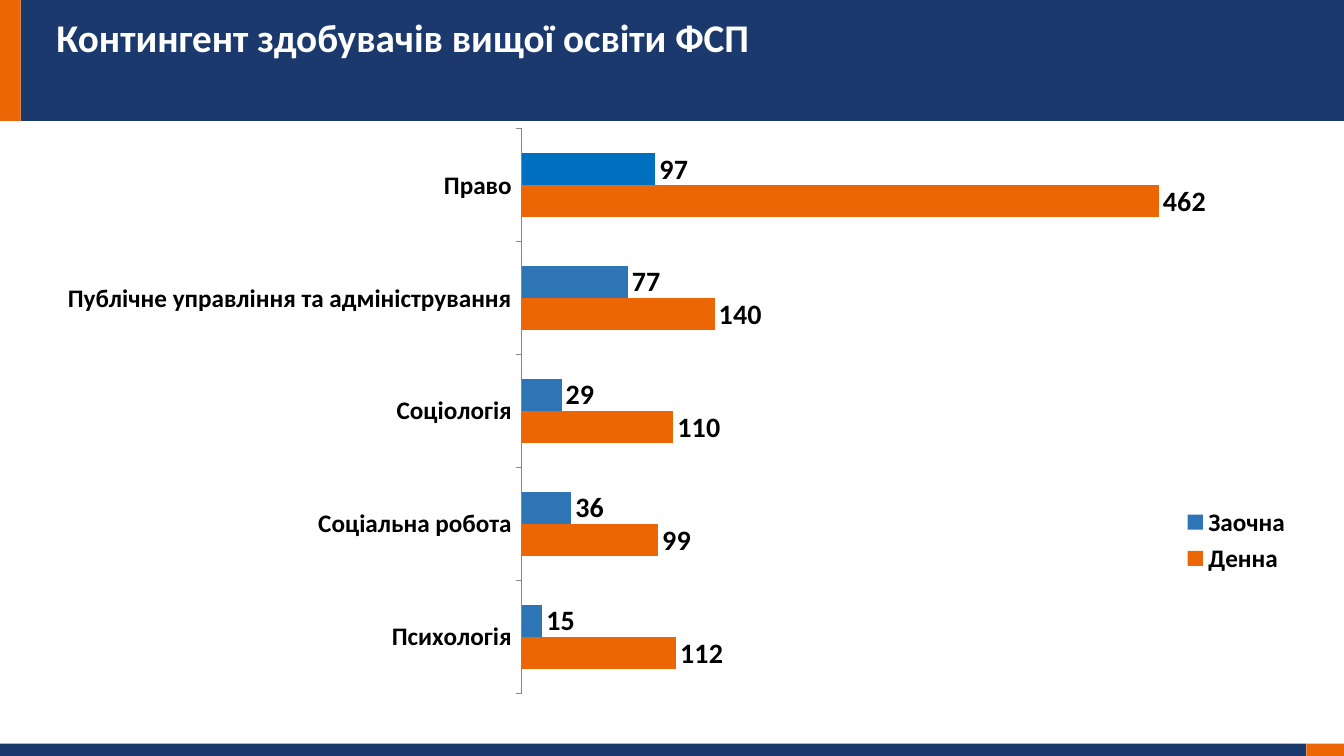
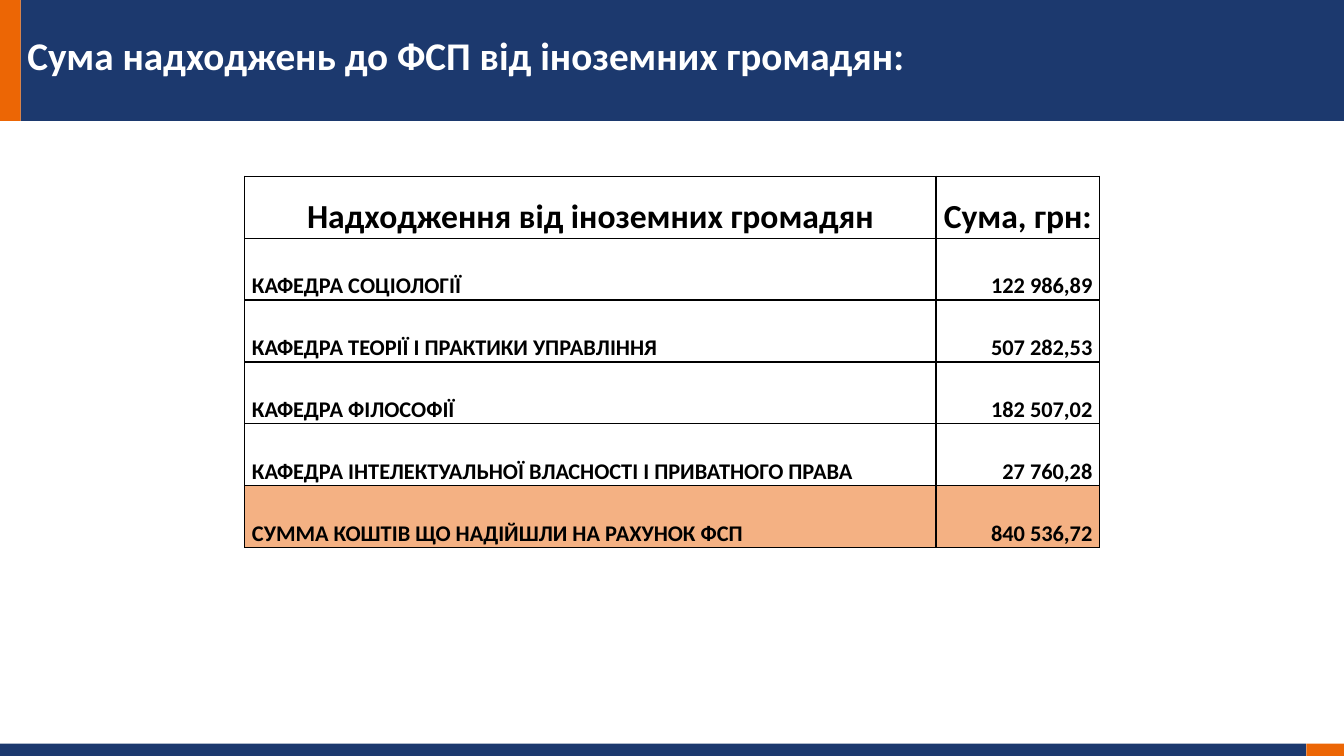
from lxml.etree import Element, SubElement
from pptx import Presentation
from pptx.chart.data import CategoryChartData
from pptx.dml.color import RGBColor
from pptx.enum.chart import XL_CHART_TYPE, XL_LABEL_POSITION, XL_LEGEND_POSITION, XL_TICK_MARK
from pptx.enum.shapes import MSO_SHAPE
from pptx.enum.text import MSO_ANCHOR, PP_ALIGN
from pptx.oxml import parse_xml
from pptx.oxml.ns import nsdecls, qn
from pptx.util import Cm, Pt

FONT = "Calibri"
NAVY, ORANGE, BLUE, BRIGHT_BLUE = "1C396E", "EC6605", "2E75B6", "0070C0"
PEACH, GREY, BLACK, WHITE = "F4B183", "868686", "000000", "FFFFFF"


def style(font, size, color):
    font.name, font.size, font.bold = FONT, Pt(size), True
    font.color.rgb = RGBColor.from_string(color)


def manual_layout(x, y, width, height, inner=False):
    """Return a c:layout element; lengths are fractions of the chart."""
    layout = Element(qn("c:layout"))
    manual = SubElement(layout, qn("c:manualLayout"))
    settings = [("layoutTarget", "inner")] if inner else []
    settings += [("xMode", "edge"), ("yMode", "edge"),
                 ("x", x), ("y", y), ("w", width), ("h", height)]
    for tag, value in settings:
        SubElement(manual, qn(f"c:{tag}")).set("val", str(value))
    return layout


prs = Presentation()
prs.slide_width, prs.slide_height = Cm(33.87), Cm(19.05)
title_only = prs.slide_layouts[5]
for placeholder in list(title_only.placeholders)[1:]:
    title_only.shapes.element.remove(placeholder.element)

# Titles
titles = [
    ("Контингент здобувачів вищої освіти ФСП", 1.42, 0.51, 23.4),
    ("Сума надходжень до ФСП від іноземних громадян:", 0.69, 0.97, 24.74),
]
slides = []
for text, left, top, width in titles:
    slide = prs.slides.add_slide(title_only)
    title = slide.shapes.title
    title.left, title.top, title.width, title.height = Cm(left), Cm(top), Cm(width), Cm(2.29)
    frame = title.text_frame
    frame.word_wrap = True
    frame.vertical_anchor = MSO_ANCHOR.TOP
    frame.margin_left = frame.margin_top = 0
    frame.margin_right, frame.margin_bottom = Cm(0.84), Cm(0.33)
    paragraph = frame.paragraphs[0]
    paragraph.alignment = PP_ALIGN.LEFT
    paragraph.line_spacing = 0.85
    run = paragraph.add_run()
    run.text = text
    style(run.font, 28, WHITE)
    slides.append(slide)
enrolment, income = slides

# Header and footer bands, moved to the shared layout
bands = [
    (0.52, -0.05, 33.35, 3.1, NAVY),
    (-0.08, -0.05, 0.6, 3.1, ORANGE),
    (-0.08, 18.74, 33, 0.31, NAVY),
    (32.92, 18.74, 0.95, 0.31, ORANGE),
]
for position, (left, top, width, height, color) in enumerate(bands, start=2):
    band = enrolment.shapes.add_shape(
        MSO_SHAPE.RECTANGLE, Cm(left), Cm(top), Cm(width), Cm(height))
    band.shadow.inherit = False
    band.fill.solid()
    band.fill.fore_color.rgb = RGBColor.from_string(color)
    band.line.fill.background()
    title_only.shapes.element.insert(position, band.element)

# Students by programme and form of study
students = CategoryChartData()
students.categories = ["Психологія", "Соціальна робота", "Соціологія",
                       "Публічне управління та адміністрування", "Право"]
students.add_series("Денна", [112, 99, 110, 140, 462])
students.add_series("Заочна", [15, 36, 29, 77, 97])
chart = enrolment.shapes.add_chart(
    XL_CHART_TYPE.BAR_CLUSTERED, Cm(1.14), Cm(2.79), Cm(31.6), Cm(15.14), students).chart
chart.has_title = False
style(chart.font, 18, BLACK)

programmes = chart.category_axis
style(programmes.tick_labels.font, 18, BLACK)
programmes.major_tick_mark = XL_TICK_MARK.OUTSIDE
programmes.format.line.color.rgb = RGBColor.from_string(GREY)
programmes.has_major_gridlines = False
counts = chart.value_axis
counts.minimum_scale, counts.maximum_scale = 0, 500
counts.has_major_gridlines = False
counts.visible = False

plot = chart.plots[0]
plot.gap_width = 150
plot.overlap = 0
plot.vary_by_categories = False
for series, color in zip(plot.series, (ORANGE, BLUE)):
    series.invert_if_negative = False
    series.format.fill.solid()
    series.format.fill.fore_color.rgb = RGBColor.from_string(color)
    labels = series.data_labels
    labels.show_value = True
    labels.position = XL_LABEL_POSITION.OUTSIDE_END
    style(labels.font, 20, BLACK)
law_part_time = plot.series[1].points[4].format.fill
law_part_time.solid()
law_part_time.fore_color.rgb = RGBColor.from_string(BRIGHT_BLUE)

chart.has_legend = True
chart.legend.position = XL_LEGEND_POSITION.RIGHT
chart.legend.include_in_layout = False
style(chart.legend.font, 18, BLACK)
for old_layout in chart.element.xpath(".//c:plotArea/c:layout | .//c:legend/c:layout"):
    old_layout.getparent().remove(old_layout)
chart.element.xpath(".//c:plotArea")[0].insert(
    0, manual_layout(0.38, 0.03, 0.55, 0.94, inner=True))
chart.element.xpath(".//c:legendPos")[0].addnext(manual_layout(0.9, 0.65, 0.1, 0.13))

# Income from foreign citizens
income_rows = [
    ("Надходження від іноземних громадян", "Сума, грн:"),
    ("КАФЕДРА СОЦІОЛОГІЇ", "122 986,89"),
    ("КАФЕДРА ТЕОРІЇ І ПРАКТИКИ УПРАВЛІННЯ", "507 282,53"),
    ("КАФЕДРА ФІЛОСОФІЇ", "182 507,02"),
    ("КАФЕДРА ІНТЕЛЕКТУАЛЬНОЇ ВЛАСНОСТІ І ПРИВАТНОГО ПРАВА", "27 760,28"),
    ("СУММА КОШТІВ ЩО НАДІЙШЛИ НА РАХУНОК ФСП", "840 536,72"),
]
row_height = 1.56
table = income.shapes.add_table(
    len(income_rows), 2, Cm(6.17), Cm(4.44), Cm(21.54), Cm(row_height * len(income_rows))).table
table.first_row = table.horz_banding = False
table.columns[0].width, table.columns[1].width = Cm(17.42), Cm(4.12)

for row, texts in enumerate(income_rows):
    is_header, is_total = row == 0, row == len(income_rows) - 1
    for column, text in enumerate(texts):
        cell = table.cell(row, column)
        cell.margin_left = cell.margin_right = Cm(0.18)
        cell.margin_top = cell.margin_bottom = 0
        cell.vertical_anchor = MSO_ANCHOR.MIDDLE if is_header else MSO_ANCHOR.BOTTOM
        paragraph = cell.text_frame.paragraphs[0]
        paragraph.line_spacing = 1.5
        if is_header:
            paragraph.alignment = PP_ALIGN.CENTER
        else:
            paragraph.alignment = (PP_ALIGN.LEFT, PP_ALIGN.RIGHT)[column]
        run = paragraph.add_run()
        run.text = text
        style(run.font, 24 if is_header else 16, BLACK)
        if is_total:
            cell.fill.solid()
            cell.fill.fore_color.rgb = RGBColor.from_string(PEACH)
        else:
            cell.fill.background()
        properties = cell._tc.get_or_add_tcPr()
        for order, side in enumerate(("lnL", "lnR", "lnT", "lnB")):
            properties.insert(order, parse_xml(
                f'<a:{side} {nsdecls("a")} w="{Pt(1)}"><a:solidFill>'
                f'<a:srgbClr val="{BLACK}"/></a:solidFill></a:{side}>'))

prs.save("out.pptx")
